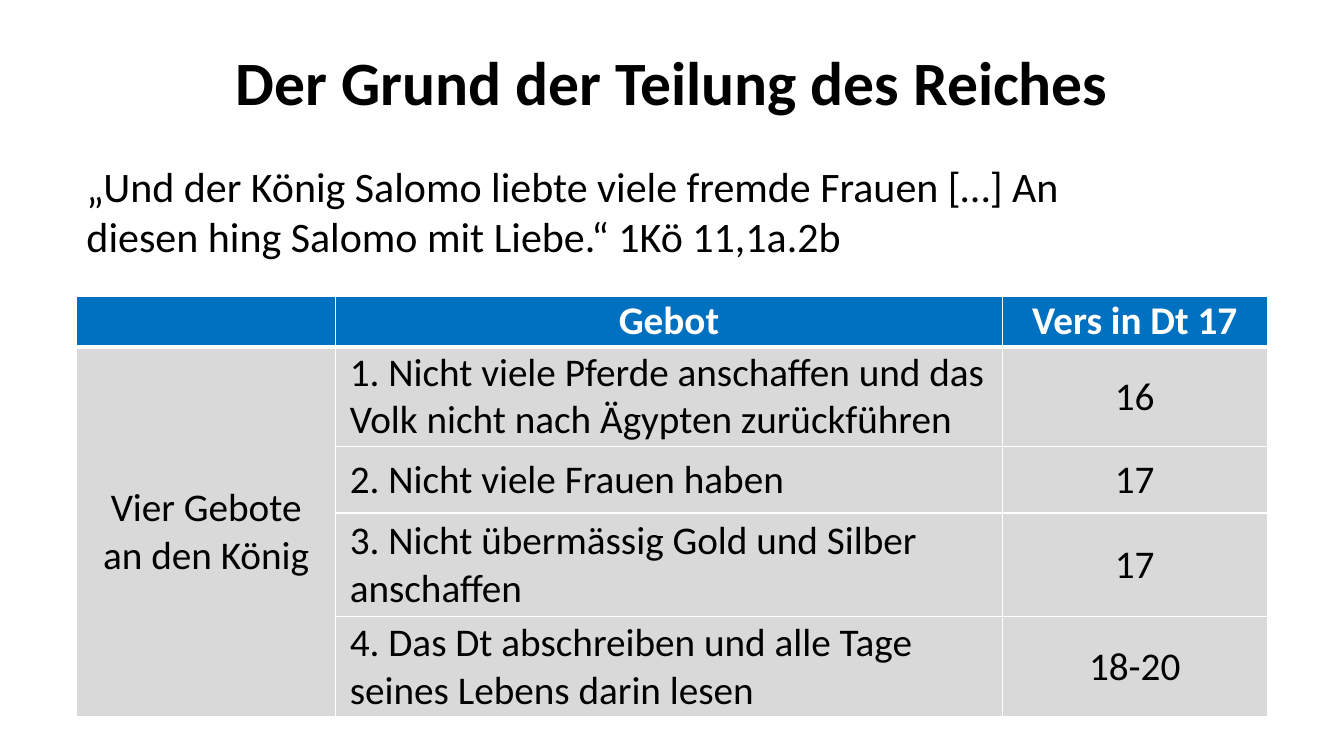
from lxml import etree
from pptx import Presentation
from pptx.dml.color import RGBColor
from pptx.enum.text import MSO_ANCHOR, PP_ALIGN
from pptx.oxml.ns import qn
from pptx.util import Inches, Pt

LEFT, CENTER = PP_ALIGN.LEFT, PP_ALIGN.CENTER
TOP, MIDDLE = MSO_ANCHOR.TOP, MSO_ANCHOR.MIDDLE
FONT = "Calibri"
BLACK, WHITE, BLUE, GRAY = "000000", "FFFFFF", "0070C0", "D9D9D9"
WIDTHS = [2.57, 6.61, 2.63]
HEIGHTS = [0.5, 0.99, 0.66, 1.03, 0.99]
ROWS = [
    ["", "Gebot", "Vers in Dt 17"],
    ["Vier Gebote\nan den König",
     "1. Nicht viele Pferde anschaffen und das Volk nicht nach Ägypten zurückführen", "16"],
    ["", "2. Nicht viele Frauen haben", "17"],
    ["", "3. Nicht übermässig Gold und Silber\nanschaffen", "17"],
    ["", "4. Das Dt abschreiben und alle Tage seines Lebens darin lesen", "18-20"],
]


def paint(hue):
    """Turn a hex string into a colour."""
    return RGBColor.from_string(hue)


def style(frame, size, hue=BLACK, bold=False, align=LEFT):
    """Format every paragraph and run of a text frame."""
    for para in frame.paragraphs:
        para.alignment = align
        para.font.size = Pt(size)
        for run in para.runs:
            run.font.name = FONT
            run.font.size = Pt(size)
            run.font.bold = bold
            run.font.color.rgb = paint(hue)


def add_text(slide, text, box, size, bold=False, align=LEFT, anchor=TOP, space=1.0):
    """Add a wrapped text box."""
    frame = slide.shapes.add_textbox(*map(Inches, box)).text_frame
    frame.word_wrap = True
    frame.vertical_anchor = anchor
    frame.text = text
    frame.paragraphs[0].line_spacing = space
    style(frame, size, bold=bold, align=align)


def add_edge(cell, side, width):
    """Draw one white border of a cell."""
    line = etree.SubElement(cell._tc.get_or_add_tcPr(), qn("a:ln" + side), w=str(Pt(width)))
    fill = etree.SubElement(line, qn("a:solidFill"))
    etree.SubElement(fill, qn("a:srgbClr"), val=WHITE)


def fill_cell(cell, text, row, col):
    """Set the borders, fill and text of a cell."""
    head = row == 0
    for side in "LRTB":
        thick = (head and side == "B") or (row == 1 and side == "T")
        add_edge(cell, side, 3 if thick else 1)
    cell.fill.solid()
    cell.fill.fore_color.rgb = paint(BLUE if head else GRAY)
    cell.vertical_anchor = MIDDLE
    cell.margin_left = cell.margin_right = Inches(0.14)
    cell.margin_top = cell.margin_bottom = 0
    cell.text_frame.text = text
    align = LEFT if col == 1 and not head else CENTER
    style(cell.text_frame, 28, WHITE if head else BLACK, head, align)


def add_grid(slide):
    """Add the table of the four commands."""
    box = map(Inches, (0.76, 2.94, sum(WIDTHS), sum(HEIGHTS)))
    table = slide.shapes.add_table(len(ROWS), len(WIDTHS), *box).table
    for col, width in zip(table.columns, WIDTHS):
        col.width = Inches(width)
    for row, height in zip(table.rows, HEIGHTS):
        row.height = Inches(height)
    for i, texts in enumerate(ROWS):
        for j, text in enumerate(texts):
            fill_cell(table.cell(i, j), text, i, j)
    table.cell(1, 0).merge(table.cell(len(ROWS) - 1, 0))


def main():
    """Build and save the slide."""
    deck = Presentation()
    deck.slide_width, deck.slide_height = Inches(13.33), Inches(7.5)
    slide = deck.slides.add_slide(deck.slide_layouts[6])
    add_text(slide, "„Und der König Salomo liebte viele fremde Frauen […] An diesen "
             "hing Salomo mit Liebe.“ 1Kö 11,1a.2b", (0.76, 1.54, 10.97, 1.11), 30)
    add_text(slide, "Der Grund der Teilung des Reiches", (0.92, 0.4, 11.5, 0.89),
             44, True, CENTER, MIDDLE, 0.9)
    add_grid(slide)
    deck.save("out.pptx")


if __name__ == "__main__":
    main()
